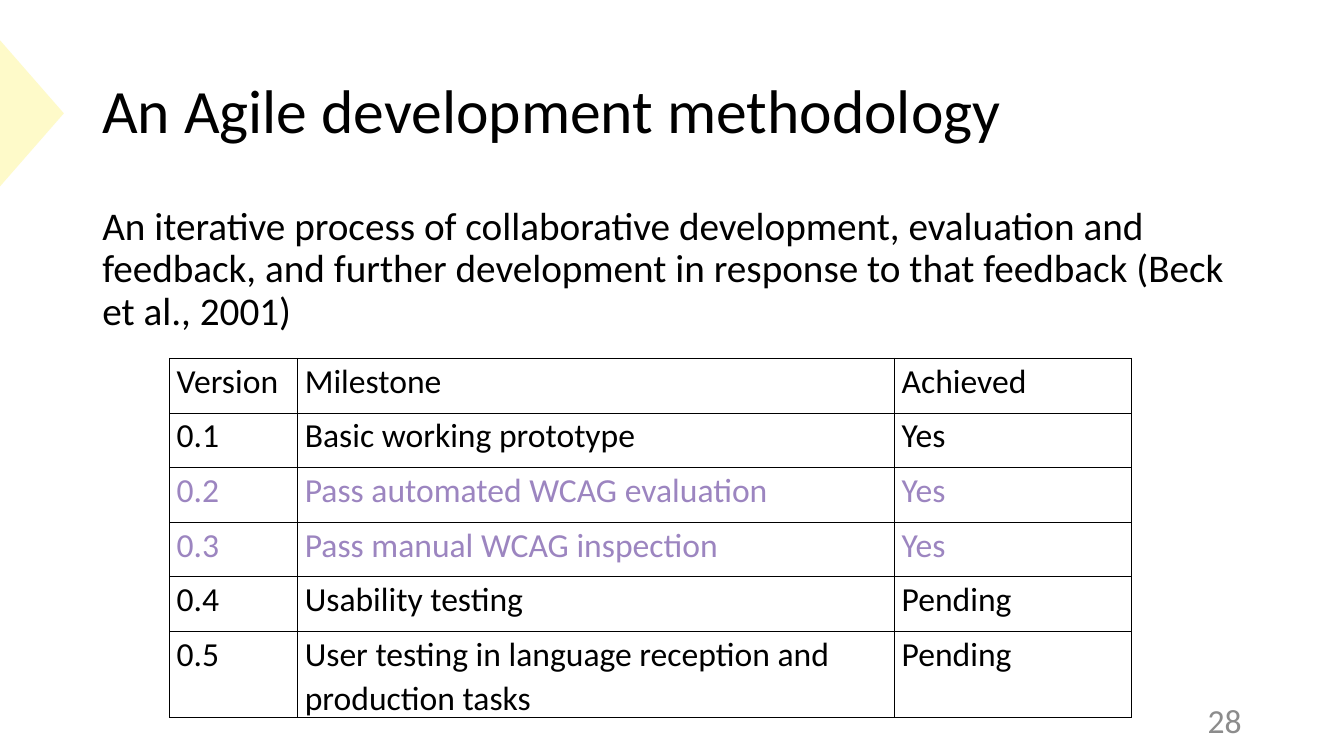
import pptx
import pptx.util
import pptx.dml.color
import pptx.enum.shapes
import pptx.enum.text
import pptx.oxml

HUES = {"ink": "000000", "done": "9C85C0", "page": "8C8C8C", "mark": "FEFAC9"}
ANCHOR = pptx.enum.text.MSO_ANCHOR
ALIGN = pptx.enum.text.PP_ALIGN

deck = pptx.Presentation()
deck.slide_width = pptx.util.Inches(13.33)
deck.slide_height = pptx.util.Inches(7.5)
slide = deck.slides.add_slide(deck.slide_layouts[6])
shapes = slide.shapes
UNIT = deck.slide_width / 160


def grid(*sizes):
    """Turn counts of grid units (160 across the slide) into lengths."""
    return [round(size * UNIT) for size in sizes]


def write(frame, text, size=24, hue="ink", lines=1.0, after=0, align=ALIGN.LEFT):
    frame.word_wrap = True
    para = frame.paragraphs[0]
    para.text = text
    para.alignment = align
    para.line_spacing = lines
    para.space_after = pptx.util.Pt(after)
    font = para.runs[0].font
    font.name = "Calibri"
    font.size = pptx.util.Pt(size)
    font.bold = False
    font.color.rgb = pptx.dml.color.RGBColor.from_string(HUES[hue])


# Marker at the left edge, turned to point right
mark = shapes.add_shape(pptx.enum.shapes.MSO_SHAPE.ISOSCELES_TRIANGLE,
                        *grid(-4.9, 9.7, 17.4, 7.6))
mark.rotation = 90
mark.shadow.inherit = False
mark.fill.solid()
mark.fill.fore_color.rgb = pptx.dml.color.RGBColor.from_string(HUES["mark"])
mark.line.fill.background()

# Title, body and page number
texts = [
    ((11, 4.8, 138, 17.4), ANCHOR.MIDDLE, "An Agile development methodology",
     dict(size=44, lines=0.9)),
    ((11, 24, 138, 18), ANCHOR.TOP,
     "An iterative process of collaborative development, evaluation and feedback, "
     "and further development in response to that feedback (Beck et al., 2001)",
     dict(size=28, lines=0.9)),
    ((113, 83.4, 36, 4.8), ANCHOR.MIDDLE, "28", dict(hue="page", align=ALIGN.RIGHT)),
]
for place, anchor, text, style in texts:
    frame = shapes.add_textbox(*grid(*place)).text_frame
    frame.vertical_anchor = anchor
    write(frame, text, **style)

# Milestones
rows = [
    ("ink", "Version", "Milestone", "Achieved"),
    ("ink", "0.1", "Basic working prototype", "Yes"),
    ("done", "0.2", "Pass automated WCAG evaluation", "Yes"),
    ("done", "0.3", "Pass manual WCAG inspection", "Yes"),
    ("ink", "0.4", "Usability testing", "Pending"),
    ("ink", "0.5", "User testing in language reception and production tasks", "Pending"),
]
widths = grid(15.25, 71.05, 28.2)
high = 6.5
table = shapes.add_table(len(rows), len(widths),
                         *grid(20.2, 42.7, 114.5, high * len(rows))).table
table.first_row = table.horz_banding = False
for column, width in zip(table.columns, widths):
    column.width = width

for r, (hue, *words) in enumerate(rows):
    for c, word in enumerate(words):
        cell = table.cell(r, c)
        cell.margin_left = cell.margin_right = pptx.util.Inches(0.07)
        cell.margin_top = cell.margin_bottom = 0
        props = cell._tc.get_or_add_tcPr()
        for side in "LRTB":
            props.append(pptx.oxml.parse_xml(
                f'<a:ln{side} xmlns:a="http://schemas.openxmlformats.org/drawingml/2006/main"'
                f' w="{pptx.util.Pt(1)}"><a:solidFill><a:srgbClr val="{HUES["ink"]}"/>'
                f'</a:solidFill></a:ln{side}>'))
        cell.fill.background()
        write(cell.text_frame, word, hue=hue, lines=1.07, after=8)

deck.save("out.pptx")
